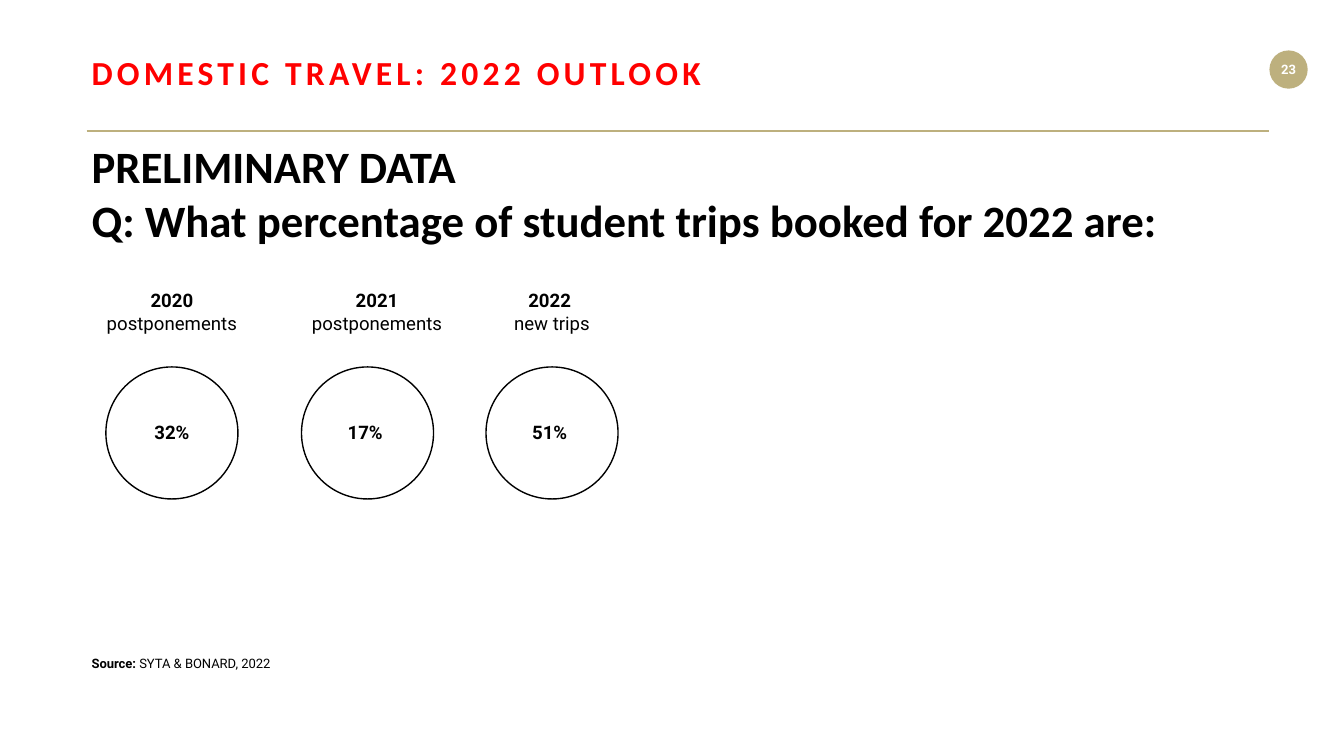
from dataclasses import dataclass
from pptx import Presentation
from pptx.dml.color import RGBColor
from pptx.enum.shapes import MSO_CONNECTOR, MSO_SHAPE
from pptx.enum.text import MSO_ANCHOR, PP_ALIGN
from pptx.oxml.ns import qn
from pptx.util import Inches, Pt
from lxml.etree import SubElement


@dataclass(frozen=True)
class Theme:
    red: RGBColor = RGBColor(0xFF, 0, 0)
    gold: RGBColor = RGBColor(0xBD, 0xB0, 0x7E)
    black: RGBColor = RGBColor(0, 0, 0)
    white: RGBColor = RGBColor(0xFF, 0xFF, 0xFF)
    head: str = "Calibri"
    body: str = "Roboto"
    title: float = 24
    query: float = 32
    label: float = 13.3
    small: float = 9.3


THEME = Theme()


def add_text(slide, box, paras, size, font=THEME.body, color=THEME.black,
             align=PP_ALIGN.LEFT, space=0, inset=True):
    frame = slide.shapes.add_textbox(*map(Inches, box)).text_frame
    frame.word_wrap = True
    if not inset:
        frame.margin_left = frame.margin_right = 0
        frame.margin_top = frame.margin_bottom = 0
        frame.vertical_anchor = MSO_ANCHOR.MIDDLE
    for i, runs in enumerate(paras):
        para = frame.add_paragraph() if i else frame.paragraphs[0]
        para.alignment = align
        for text, bold in runs:
            run = para.add_run()
            run.text = text
            run.font.name = font
            run.font.size = Pt(size)
            run.font.bold = bold
            run.font.color.rgb = color
            if space:
                run.font._element.set("spc", str(space * 100))


def add_disc(slide, left, top, size, fill=None):
    disc = slide.shapes.add_shape(
        MSO_SHAPE.OVAL, *map(Inches, (left, top, size, size)))
    disc.shadow.inherit = False
    if fill is None:
        disc.fill.background()
        disc.line.color.rgb = THEME.black
        disc.line.width = Pt(1)
    else:
        disc.fill.solid()
        disc.fill.fore_color.rgb = fill
        disc.line.fill.background()


def add_rule(slide, left, right, top):
    rule = slide.shapes.add_connector(
        MSO_CONNECTOR.STRAIGHT, *map(Inches, (left, top, right, top)))
    rule.line.color.rgb = THEME.gold
    rule.line.width = Pt(1.5)
    SubElement(rule._element.spPr, qn("a:effectLst"))


def add_badge(slide, number):
    add_disc(slide, 12.59, 0.5, 0.38, THEME.gold)
    add_text(slide, (12.59, 0.56, 0.38, 0.26), [[(number, True)]], THEME.small,
             color=THEME.white, align=PP_ALIGN.CENTER, inset=False)


def add_share(slide, left, value, label, start, width):
    size = 1.31
    add_disc(slide, left, 3.64, size)
    add_text(slide, (left, 4.13, size, 0.33), [[(value, True)]],
             THEME.label, align=PP_ALIGN.CENTER)
    add_text(slide, (start, 2.82, width, 0.55), label,
             THEME.label, align=PP_ALIGN.CENTER)


def main():
    deck = Presentation()
    deck.slide_width, deck.slide_height = Inches(13.33), Inches(7.5)
    slide = deck.slides.add_slide(deck.slide_layouts[6])

    add_text(slide, (0.81, 0.47, 7.08, 0.5),
             [[("DOMESTIC TRAVEL: 2022 OUTLOOK", True)]],
             THEME.title, THEME.head, THEME.red, space=3)
    add_badge(slide, "23")
    add_rule(slide, 0.86, 12.59, 1.3)
    add_text(slide, (0.81, 1.33, 12.29, 1.18),
             [[("PRELIMINARY DATA", True)],
              [("Q: What percentage of student trips booked for 2022 are:", True)]],
             THEME.query, THEME.head)

    shares = [
        (1.05, "32%", [[("2020 ", True), ("postponements", False)]], 0.91, 1.59),
        (2.99, "17% ", [[("2021 ", True), ("postponements", False)]], 2.99, 1.5),
        (4.82, "51% ", [[("2022 ", True)], [("new trips", False)]], 4.82, 1.31),
    ]
    for share in shares:
        add_share(slide, *share)

    add_text(slide, (0.81, 6.45, 12.29, 0.26),
             [[("Source: ", True), ("SYTA & BONARD, 2022", False)]], THEME.small)
    deck.save("out.pptx")


if __name__ == "__main__":
    main()
